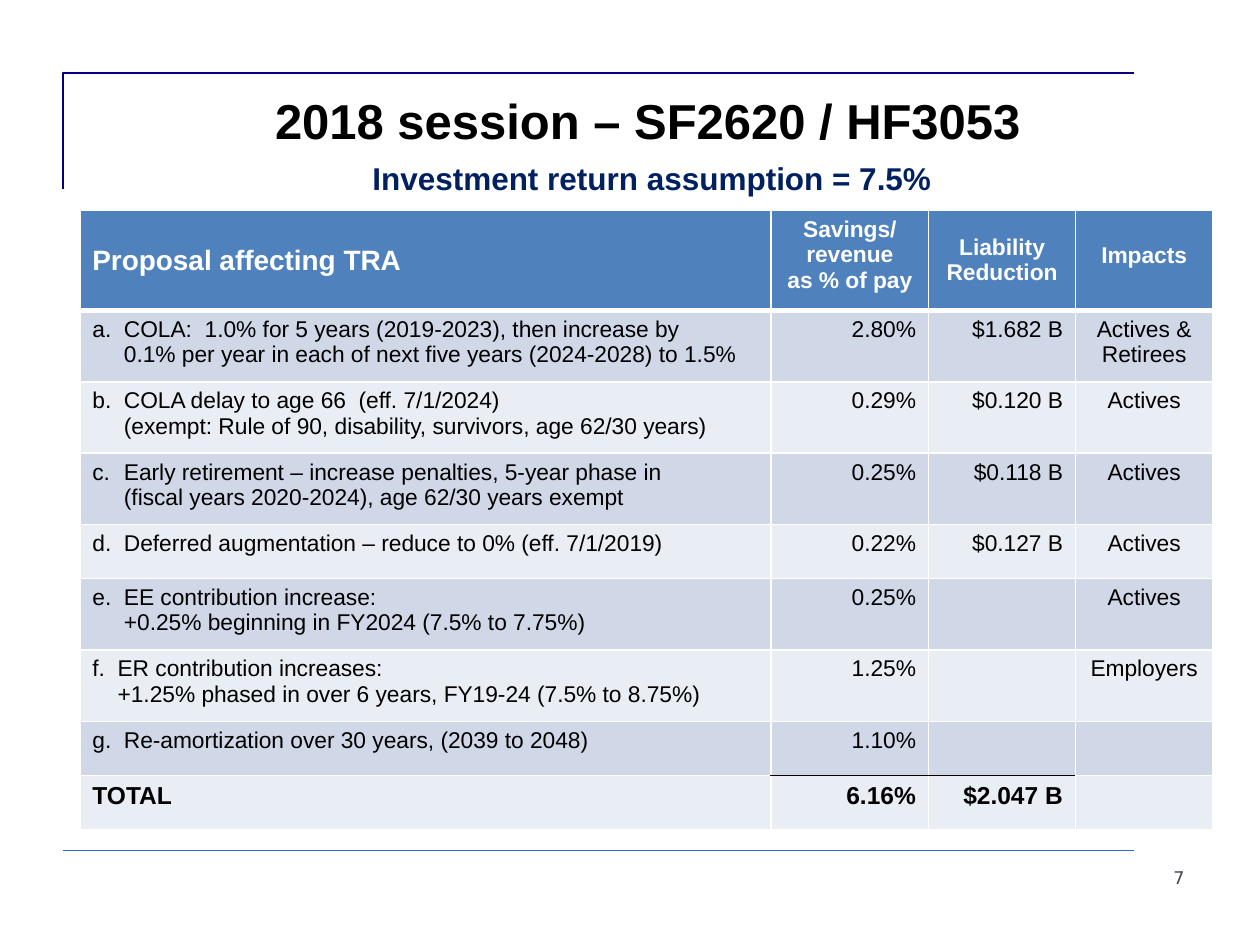
"""Build the pension proposal slide with its savings table."""
import pptx
import pptx.dml.color
import pptx.enum.shapes
import pptx.enum.text
import pptx.oxml
import pptx.oxml.ns
import pptx.util

Pt = pptx.util.Pt
ALIGN = pptx.enum.text.PP_ALIGN
ANCHOR = pptx.enum.text.MSO_ANCHOR

TITLE = "2018 session – SF2620 / HF3053"
SUBTITLE = "Investment return assumption = 7.5%"
PAGE_NUMBER = "7"

HEADERS = [
    ("Proposal affecting TRA", dict(size=16, align=ALIGN.LEFT, anchor=ANCHOR.MIDDLE)),
    ("Savings/\nrevenue\nas % of pay", {}),
    ("Liability Reduction", dict(anchor=ANCHOR.MIDDLE)),
    ("Impacts", dict(top=18.6)),
]
ROWS = [
    ("a.\tCOLA:  1.0% for 5 years (2019-2023), then increase by\n"
     "0.1% per year in each of next five years (2024-2028) to 1.5%",
     "2.80%", "$1.682 B", "Actives &\nRetirees"),
    ("b.\tCOLA delay to age 66  (eff. 7/1/2024)\n"
     "(exempt: Rule of 90, disability, survivors, age 62/30 years)",
     "0.29%", "$0.120 B", "Actives"),
    ("c.\tEarly retirement – increase penalties, 5-year phase in\n"
     "(fiscal years 2020-2024), age 62/30 years exempt",
     "0.25%", "$0.118 B", "Actives"),
    ("d.\tDeferred augmentation – reduce to 0% (eff. 7/1/2019)",
     "0.22%", "$0.127 B", "Actives"),
    ("e.\tEE contribution increase:\n+0.25% beginning in FY2024 (7.5% to 7.75%)",
     "0.25%", "", "Actives"),
    ("f.\tER contribution increases:\n"
     "+1.25% phased in over 6 years, FY19-24 (7.5% to 8.75%)",
     "1.25%", "", "Employers"),
    ("g.\tRe-amortization over 30 years, (2039 to 2048)", "1.10%", "", ""),
    ("TOTAL", "6.16%", "$2.047 B", ""),
]
COLUMN_WIDTHS = [395, 90, 84, 78.4]
COLUMN_ALIGN = [ALIGN.LEFT, ALIGN.RIGHT, ALIGN.RIGHT, ALIGN.CENTER]
HEADER_HEIGHT, DOUBLE_HEIGHT, SINGLE_HEIGHT = 57.2, 40.8, 30.9
BANDS = ["D0D8E8", "E9EDF4"]
HANG, NARROW_HANG = 18, 14.4


def color(value):
    return pptx.dml.color.RGBColor.from_string(value)


def write(frame, text, size=13, ink="000000", bold=False, font="Arial",
          align=ALIGN.LEFT, hang=0, after=0):
    frame.text = text
    for index, paragraph in enumerate(frame.paragraphs):
        paragraph.alignment = align
        paragraph.space_after = Pt(after)
        if hang:
            properties = paragraph._p.get_or_add_pPr()
            properties.set("marL", str(Pt(hang)))
            properties.set("indent", str(0 if index else -Pt(hang)))
        for run in paragraph.runs:
            run.font.size = Pt(size)
            run.font.bold = bold
            run.font.name = font
            run.font.color.rgb = color(ink)


def add_text(slide, text, left, top, width, height, **style):
    frame = slide.shapes.add_textbox(Pt(left), Pt(top), Pt(width), Pt(height)).text_frame
    frame.word_wrap = True
    write(frame, text, **style)


def set_borders(cell, **special):
    properties = cell._tc.get_or_add_tcPr()
    for side in "LRTB":
        ink, width = special.get(side, ("FFFFFF", 1))
        properties.append(pptx.oxml.parse_xml(
            f'<a:ln{side} {pptx.oxml.ns.nsdecls("a")} w="{Pt(width)}"><a:solidFill>'
            f'<a:srgbClr val="{ink}"/></a:solidFill></a:ln{side}>'))


def fill_cell(cell, ink):
    cell.fill.solid()
    cell.fill.fore_color.rgb = color(ink)


def add_rules(slide):
    builder = slide.shapes.build_freeform(Pt(36), Pt(108))
    builder.add_line_segments([(Pt(36), Pt(41.8)), (Pt(648), Pt(41.8))], close=False)
    corner = builder.convert_to_shape()
    corner.shadow.inherit = False
    corner.fill.background()
    footer = slide.shapes.add_connector(
        pptx.enum.shapes.MSO_CONNECTOR.STRAIGHT, Pt(36), Pt(486), Pt(648), Pt(486))
    footer._element.spPr.append(
        pptx.oxml.parse_xml(f'<a:effectLst {pptx.oxml.ns.nsdecls("a")}/>'))
    for shape, ink, width in [(corner, "000080", 1.5), (footer, "3366CC", 0.25)]:
        shape.line.color.rgb = color(ink)
        shape.line.width = Pt(width)


def add_proposals(slide):
    heights = [HEADER_HEIGHT] + [
        DOUBLE_HEIGHT if "\n" in row[0] else SINGLE_HEIGHT for row in ROWS]
    table = slide.shapes.add_table(
        len(heights), len(COLUMN_WIDTHS), Pt(45.6), Pt(120.2),
        Pt(sum(COLUMN_WIDTHS)), Pt(sum(heights))).table
    for column, width in zip(table.columns, COLUMN_WIDTHS):
        column.width = Pt(width)
    for table_row, height in zip(table.rows, heights):
        table_row.height = Pt(height)

    for index, (text, options) in enumerate(HEADERS):
        cell = table.cell(0, index)
        cell.vertical_anchor = options.get("anchor", ANCHOR.TOP)
        cell.margin_top = Pt(options.get("top", 3.6))
        write(cell.text_frame, text, size=options.get("size", 13), ink="FFFFFF",
              bold=True, align=options.get("align", ALIGN.CENTER))
        set_borders(cell, B=("FFFFFF", 3))
        fill_cell(cell, "4F81BD")

    total = len(ROWS)
    for number, row in enumerate(ROWS, 1):
        for index, text in enumerate(row):
            cell = table.cell(number, index)
            hang = 0
            if "\t" in text:
                hang = NARROW_HANG if text.startswith("f.") else HANG
            write(cell.text_frame, text, size=14 if number == total else 13,
                  bold=number == total, align=COLUMN_ALIGN[index], hang=hang)
            special = {}
            if number == 1:
                special["T"] = ("FFFFFF", 3)
            if index in (1, 2) and number >= total - 1:
                special["T" if number == total else "B"] = ("000000", 1)
            set_borders(cell, **special)
            fill_cell(cell, BANDS[(number - 1) % 2])


def main():
    presentation = pptx.Presentation()
    presentation.slide_width, presentation.slide_height = Pt(720), Pt(540)
    slide = presentation.slides.add_slide(presentation.slide_layouts[5])
    add_rules(slide)
    title = slide.shapes.title
    title.left, title.top, title.width, title.height = Pt(143.3), Pt(48.2), Pt(453.6), Pt(41)
    title.text_frame.auto_size = pptx.enum.text.MSO_AUTO_SIZE.NONE
    title.text_frame.word_wrap = False
    title.text_frame.vertical_anchor = ANCHOR.MIDDLE
    write(title.text_frame, TITLE, size=28, bold=True, align=ALIGN.CENTER)
    add_text(slide, SUBTITLE, 121.7, 87.1, 501.8, 28.8, size=18, ink="002060",
             bold=True, align=ALIGN.CENTER, after=6)
    add_proposals(slide)
    add_text(slide, PAGE_NUMBER, 516.2, 491.8, 167.8, 36, size=10, ink="464653",
             font="DejaVu Sans", align=ALIGN.RIGHT)
    presentation.save("out.pptx")


if __name__ == "__main__":
    main()
